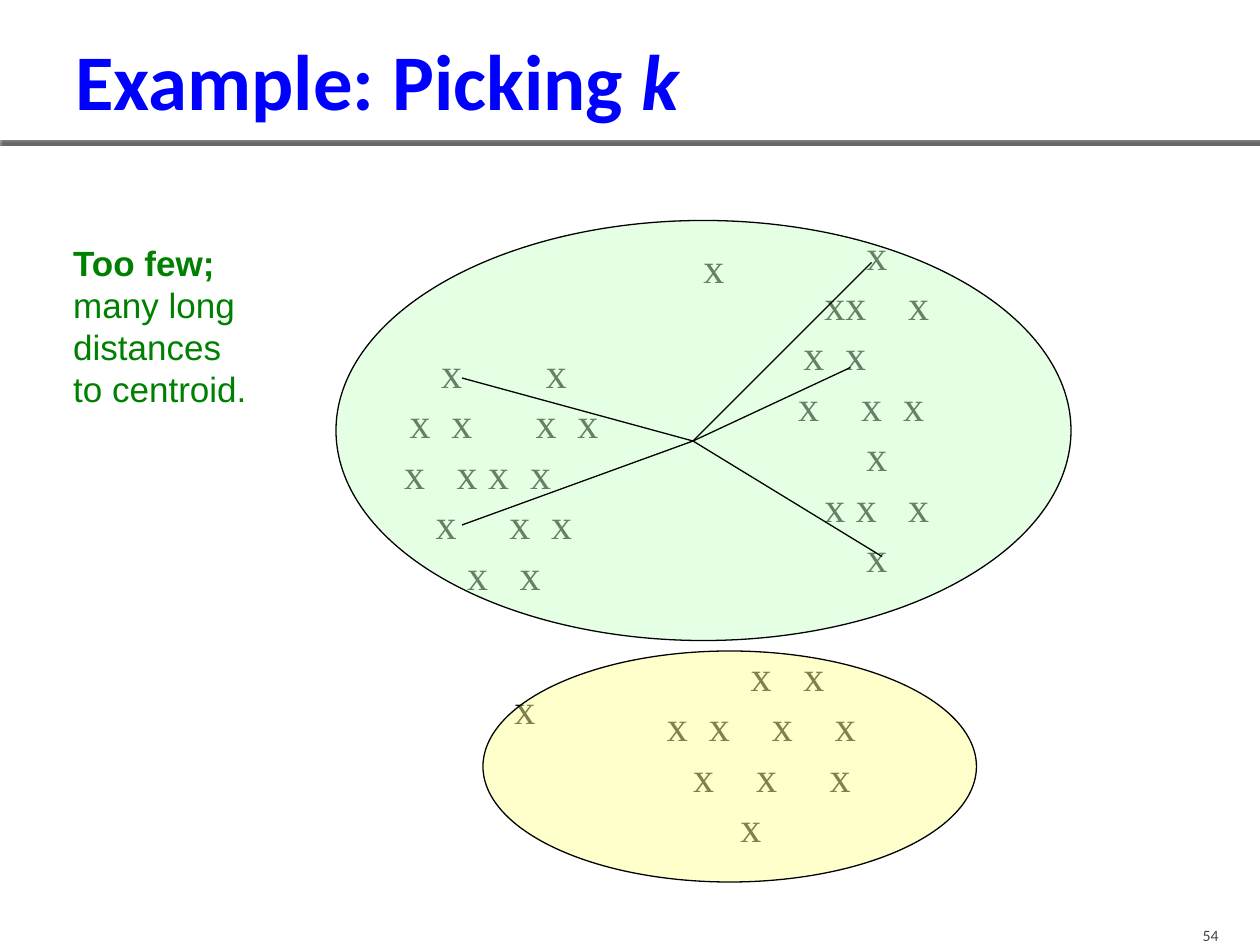
from lxml import etree
from pptx import Presentation
from pptx.dml.color import RGBColor
from pptx.enum.shapes import MSO_CONNECTOR, MSO_SHAPE
from pptx.enum.text import MSO_ANCHOR, PP_ALIGN
from pptx.oxml.ns import qn
from pptx.util import Pt

LEFT, RIGHT = PP_ALIGN.LEFT, PP_ALIGN.RIGHT
TOP, MIDDLE, BOTTOM = MSO_ANCHOR.TOP, MSO_ANCHOR.MIDDLE, MSO_ANCHOR.BOTTOM
OVAL, RECTANGLE = MSO_SHAPE.OVAL, MSO_SHAPE.RECTANGLE
STRAIGHT = MSO_CONNECTOR.STRAIGHT

BLACK = RGBColor(0x00, 0x00, 0x00)
WHITE = RGBColor(0xFF, 0xFF, 0xFF)
BLUE = RGBColor(0x00, 0x00, 0xFF)
GREEN = RGBColor(0x00, 0x80, 0x00)
GRAY = RGBColor(0x45, 0x45, 0x45)
PALE_GREEN = RGBColor(0xCC, 0xFF, 0xCC)
PALE_YELLOW = RGBColor(0xFF, 0xFF, 0x99)

TITLE_FORMAT = {"name": "Calibri", "size": Pt(45), "bold": True}
POINT_FORMAT = {"name": "Times New Roman", "size": Pt(24)}
NOTE_FORMAT = {"name": "Arial", "size": Pt(20)}
NUMBER_FORMAT = {"name": "Calibri", "size": Pt(9)}

MARK_WIDTH = 12
ROW_HEIGHT = 28.8

# Left, top, width, and for each row the offsets of its marks from the left
CLUSTERS = [
    (228, 198, 132, [(24, 84), (6, 30, 78, 102), (3, 33, 51, 75),
                     (21, 63, 87), (39, 69)]),
    (453, 130.3, 96, [(42,), (18, 30, 66), (6, 30), (3, 39, 63),
                      (42,), (18, 36, 66), (42,)]),
    (378, 371.2, 126, [(51, 81), (3, 27, 63, 99), (18, 54, 96), (45,)]),
    (396, 138, 30, [(6,)]),
    (288, 390, 30, [(6,)]),
]
CENTROID = (396, 252)
FAR_POINTS = [(264, 216), (264, 300), (504, 318), (486, 210), (498, 150)]


def add_run(paragraph, text, color, formats):
    run = paragraph.add_run()
    run.text = text
    for name, value in formats.items():
        setattr(run.font, name, value)
    run.font.color.rgb = color
    return run


def set_frame(frame, anchor, insets):
    left, top, right, bottom = insets
    values = {"word_wrap": True, "vertical_anchor": anchor,
              "margin_left": Pt(left), "margin_top": Pt(top),
              "margin_right": Pt(right), "margin_bottom": Pt(bottom)}
    for name, value in values.items():
        setattr(frame, name, value)


def add_text(slide, box, lines, color, formats, anchor=TOP, align=LEFT,
             spacing=None):
    """Add a text box with one paragraph for each line; return paragraphs."""
    frame = slide.shapes.add_textbox(*map(Pt, box)).text_frame
    set_frame(frame, anchor, (0, 0, 0, 0))
    paragraphs = []
    for index, line in enumerate(lines):
        paragraph = frame.add_paragraph() if index else frame.paragraphs[0]
        paragraph.alignment = align
        if spacing:
            paragraph.line_spacing = Pt(spacing)
        add_run(paragraph, line, color, formats)
        paragraphs.append(paragraph)
    return paragraphs


def row_layout(offsets):
    """Return the text of a row and its tab stops; touching marks share one."""
    text, stops, end = "", [], None
    for offset in offsets:
        if offset != end:
            text += "\t"
            stops.append(offset)
        text += "x"
        end = offset + MARK_WIDTH
    return text, stops


def add_cluster(slide, left, top, width, rows):
    layouts = [row_layout(offsets) for offsets in rows]
    box = (left, top, width, ROW_HEIGHT * len(rows))
    paragraphs = add_text(slide, box, [text for text, _ in layouts], BLACK,
                          POINT_FORMAT, spacing=ROW_HEIGHT)
    for paragraph, (_, stops) in zip(paragraphs, layouts):
        properties = paragraph._p.get_or_add_pPr()
        tabs = etree.SubElement(properties, qn("a:tabLst"))
        for stop in stops:
            etree.SubElement(tabs, qn("a:tab"), pos=str(Pt(stop)), algn="l")


def add_ellipse(slide, box, color):
    ellipse = slide.shapes.add_shape(OVAL, *map(Pt, box))
    ellipse.shadow.inherit = False
    ellipse.fill.solid()
    ellipse.fill.fore_color.rgb = color
    ellipse.line.color.rgb = BLACK
    ellipse.line.width = Pt(0.75)
    fill_color = ellipse._element.spPr.find(qn("a:solidFill"))[0]
    etree.SubElement(fill_color, qn("a:alpha"), val="50000")


def add_distance(slide, start, end):
    line = slide.shapes.add_connector(STRAIGHT, *map(Pt, start + end))
    line.line.color.rgb = BLACK
    line.line.width = Pt(0.75)
    etree.SubElement(line._element.spPr, qn("a:effectLst"))


def add_title_bar(slide):
    bar = slide.shapes.add_shape(RECTANGLE, 0, Pt(76.3), Pt(720), Pt(3.6))
    bar.fill.solid()
    bar.fill.fore_color.rgb = WHITE
    bar.line.fill.background()
    bar.shadow.inherit = False
    effects = bar._element.spPr.find(qn("a:effectLst"))
    shadow = etree.SubElement(
        effects, qn("a:outerShdw"), blurRad=str(Pt(0.8)), dist=str(Pt(2.5)),
        dir="5400000", algn="t", rotWithShape="0")
    color = etree.SubElement(shadow, qn("a:srgbClr"), val=str(BLACK))
    etree.SubElement(color, qn("a:alpha"), val="60000")


def set_title(slide):
    title = slide.shapes.title
    box = {"left": 36, "top": 12.2, "width": 648, "height": 66.2}
    for name, value in box.items():
        setattr(title, name, Pt(value))
    set_frame(title.text_frame, MIDDLE, (7.2, 3.6, 3.6, 3.6))
    paragraph = title.text_frame.paragraphs[0]
    paragraph.alignment = LEFT
    add_run(paragraph, "Example: Picking ", BLUE, TITLE_FORMAT)
    add_run(paragraph, "k", BLUE, TITLE_FORMAT | {"italic": True})


def main():
    presentation = Presentation()
    presentation.slide_width, presentation.slide_height = Pt(720), Pt(540)
    slide = presentation.slides.add_slide(presentation.slide_layouts[5])

    add_title_bar(slide)
    set_title(slide)
    for cluster in CLUSTERS:
        add_cluster(slide, *cluster)
    add_ellipse(slide, (192, 126, 420, 240), PALE_GREEN)
    add_ellipse(slide, (276, 372, 282, 132), PALE_YELLOW)
    for point in FAR_POINTS:
        add_distance(slide, CENTROID, point)

    note = add_text(slide, (41.8, 138.2, 110, 96),
                    ["Too few;", "many long", "distances", "to centroid."],
                    GREEN, NOTE_FORMAT, spacing=24)
    note[0].runs[0].font.bold = True
    add_text(slide, (646, 522, 50.4, 18), ["54"], GRAY, NUMBER_FORMAT,
             anchor=BOTTOM, align=RIGHT)
    presentation.save("out.pptx")


if __name__ == "__main__":
    main()
